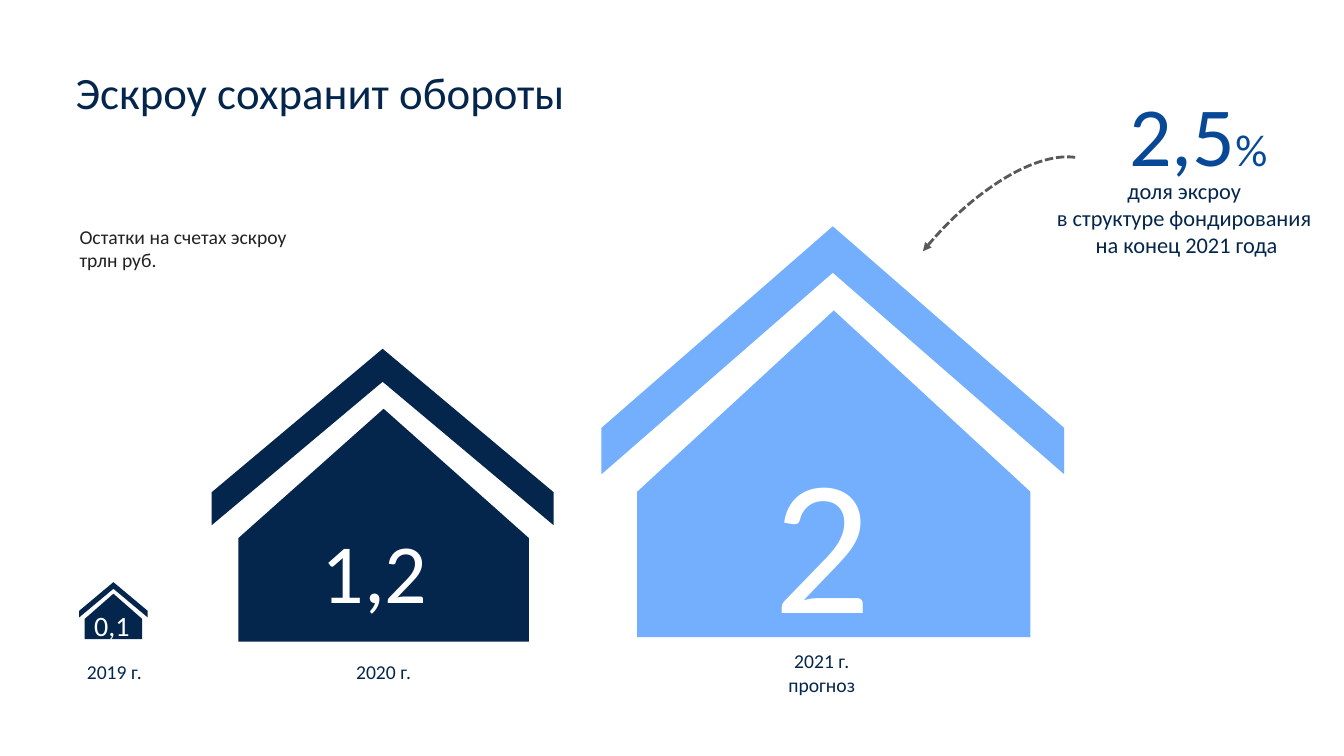
from dataclasses import dataclass

import pptx
import pptx.dml.color
import pptx.enum.dml
import pptx.enum.shapes
import pptx.enum.text
import pptx.oxml
import pptx.oxml.ns
import pptx.util

Inches = pptx.util.Inches
Pt = pptx.util.Pt
RGBColor = pptx.dml.color.RGBColor
MSO_SHAPE = pptx.enum.shapes.MSO_SHAPE
PP_ALIGN = pptx.enum.text.PP_ALIGN
MSO_ANCHOR = pptx.enum.text.MSO_ANCHOR

NAVY = RGBColor(0x04, 0x26, 0x4D)
SKY = RGBColor(0x73, 0xAF, 0xFD)
BLUE = RGBColor(0x08, 0x49, 0x97)
INK = RGBColor(0x22, 0x22, 0x22)
GRAY = RGBColor(0x59, 0x59, 0x59)
WHITE = RGBColor(0xFF, 0xFF, 0xFF)
FONT = "Calibri"

Box = tuple[float, float, float, float]


@dataclass
class Label:
    text: str
    box: Box
    size: int = 14
    color: RGBColor = NAVY
    align: PP_ALIGN = PP_ALIGN.CENTER


@dataclass
class House:
    walls: Box
    roof: Box
    value: Label
    year: Label
    color: RGBColor = NAVY


HOUSES = [
    House((0.9, 5.83, 0.45, 0.57), (0.95, 5.61, 0.35, 0.68),
          Label("0,1", (0.84, 6.04, 0.54, 0.32), 20, WHITE),
          Label("2019 г.", (0.66, 6.5, 0.95, 0.34))),
    House((2.65, 3.77, 2.31, 2.88), (2.92, 2.64, 1.75, 3.39),
          Label("1,2", (2.36, 4.83, 2.71, 1.64), 60, WHITE),
          Label("2020 г.", (3.33, 6.5, 0.95, 0.34))),
    House((6.65, 2.75, 3.24, 3.9), (7.03, 1.18, 2.46, 4.59),
          Label("2", (6.32, 4.16, 3.68, 2.31), 138, WHITE),
          Label("2021 г.\nпрогноз", (7.54, 6.39, 1.22, 0.57)), SKY),
]
UNITS = Label("Остатки на счетах эскроу \nтрлн руб.", (0.69, 2.18, 5.15, 0.57),
              color=INK, align=PP_ALIGN.LEFT)
SHARE = Label("2,5", (10.61, 0.77, 2.55, 1.11), 60, BLUE)
SHARE_NOTE = Label("доля эксроу \nв структуре фондирования \nна конец 2021 года",
                   (10.32, 1.71, 2.9, 0.91), 16)


def lengths(box: Box) -> list[pptx.util.Length]:
    return [Inches(v) for v in box]


def add_label(shapes, label: Label):
    sp = shapes.add_textbox(*lengths(label.box))
    tf = sp.text_frame
    tf.word_wrap = True
    p = tf.paragraphs[0]
    p.text = label.text
    p.alignment = label.align
    p.font.name = FONT
    p.font.size = Pt(label.size)
    p.font.color.rgb = label.color
    return tf


def add_part(shapes, kind: MSO_SHAPE, box: Box, adjustment: float, color: RGBColor) -> None:
    sp = shapes.add_shape(kind, *lengths(box))
    sp.rotation = 270
    sp.adjustments[0] = adjustment
    sp.shadow.inherit = False
    sp.fill.solid()
    sp.fill.fore_color.rgb = color
    sp.line.fill.background()


def add_house(shapes, house: House) -> None:
    parts = shapes.add_group_shape().shapes
    add_part(parts, MSO_SHAPE.PENTAGON, house.walls, 0.555, house.color)
    add_part(parts, MSO_SHAPE.CHEVRON, house.roof, 0.813, house.color)
    tf = add_label(parts, house.value)
    tf.vertical_anchor = MSO_ANCHOR.MIDDLE
    tf.margin_left = tf.margin_right = tf.margin_top = tf.margin_bottom = 0
    add_label(shapes, house.year)


def add_title(title, text: str) -> None:
    title.left, title.top, title.width, title.height = lengths((0.65, 0.65, 12.06, 0.44))
    tf = title.text_frame
    tf.auto_size = pptx.enum.text.MSO_AUTO_SIZE.NONE
    tf.vertical_anchor = MSO_ANCHOR.TOP
    p = tf.paragraphs[0]
    p.text = text
    p.alignment = PP_ALIGN.LEFT
    p.line_spacing = 0.9
    p.space_before = Pt(10)
    p.font.name = FONT
    p.font.size = Pt(32)
    p.font.color.rgb = NAVY


def add_curved_arrow(shapes) -> None:
    arc = shapes.add_shape(MSO_SHAPE.ARC, *lengths((8.03, 2.2, 3.48, 1.59)))
    arc.rotation = 309.2
    arc.adjustments[0] = 162
    arc.adjustments[1] = 211.64
    arc.shadow.inherit = False
    arc.fill.background()
    arc.line.color.rgb = GRAY
    arc.line.width = Pt(2)
    arc.line.dash_style = pptx.enum.dml.MSO_LINE.SQUARE_DOT
    ln = arc.line._get_or_add_ln()
    ln.append(pptx.oxml.parse_xml(
        f'<a:headEnd {pptx.oxml.ns.nsdecls("a")} type="triangle"/>'))


def main() -> None:
    prs = pptx.Presentation()
    prs.slide_width = Inches(13.33)
    prs.slide_height = Inches(7.5)
    s = prs.slides.add_slide(prs.slide_layouts[5])
    add_title(s.shapes.title, "Эскроу сохранит обороты")
    for house in HOUSES:
        add_house(s.shapes, house)
    add_label(s.shapes, UNITS)
    r = add_label(s.shapes, SHARE).paragraphs[0].add_run()
    r.text = "%"
    r.font.size = Pt(32)
    add_label(s.shapes, SHARE_NOTE)
    add_curved_arrow(s.shapes)
    prs.save("out.pptx")


if __name__ == "__main__":
    main()
